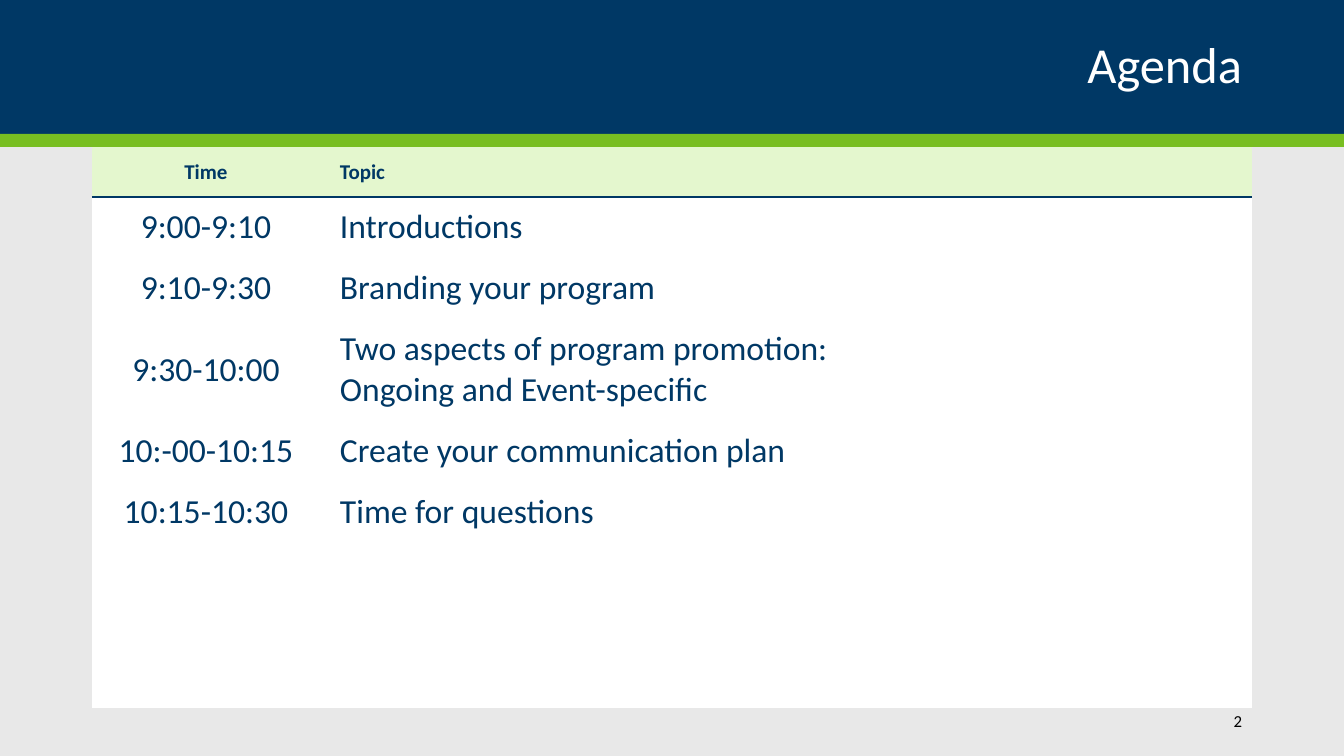
from dataclasses import dataclass

from lxml import etree
from pptx import Presentation
from pptx import util as u
from pptx.dml.color import RGBColor
from pptx.enum import shapes, text
from pptx.oxml import ns

PX = u.Inches(7.5) / 756
SLIDE_WIDTH, SLIDE_HEIGHT = 1344, 756


@dataclass(frozen=True)
class Theme:
    font: str = "Calibri"
    navy: str = "003865"
    green: str = "78BE21"
    pale_green: str = "E4F7CE"
    white: str = "FFFFFF"
    black: str = "000000"
    backdrop: str = "E8E8E8"
    title_size: int = 36
    heading_size: int = 15
    body_size: int = 24
    number_size: int = 12


THEME = Theme()
HEADINGS = ("Time", "Topic")
SESSIONS = [
    ("9:00-9:10", "Introductions"),
    ("9:10-9:30", "Branding your program"),
    ("9:30-10:00", "Two aspects of program promotion:\nOngoing and Event-specific"),
    ("10:-00-10:15", "Create your communication plan"),
    ("10:15-10:30", "Time for questions"),
]
SPARE_ROWS = 3
COLUMN_ALIGNMENTS = (text.PP_ALIGN.CENTER, text.PP_ALIGN.LEFT)


def px(length):
    return u.Emu(round(length * PX))


def paint(fill, color):
    fill.solid()
    fill.fore_color.rgb = RGBColor.from_string(color)


def style_paragraph(paragraph, size, color, align, bold=False):
    font = paragraph.font
    font.name, font.size, font.bold = THEME.font, u.Pt(size), bold
    font.color.rgb = RGBColor.from_string(color)
    paragraph.alignment = align


def add_band(slide, box, color):
    band = slide.shapes.add_shape(shapes.MSO_SHAPE.RECTANGLE, *map(px, box))
    band.shadow.inherit = False
    paint(band.fill, color)
    band.line.fill.background()


def add_right_label(slide, box, wording, size, color):
    frame = slide.shapes.add_textbox(*map(px, box)).text_frame
    frame.word_wrap = True
    frame.vertical_anchor = text.MSO_ANCHOR.MIDDLE
    label = frame.paragraphs[0]
    label.text = wording
    style_paragraph(label, size, color, text.PP_ALIGN.RIGHT)
    return label


def set_borders(cell, ruled_side=None):
    """Clear all four cell borders except the one ruled in navy."""
    properties = cell._tc.get_or_add_tcPr()
    for side in ("L", "R", "T", "B"):
        line = etree.SubElement(properties, ns.qn(f"a:ln{side}"), w=str(u.Pt(1)))
        if side == ruled_side:
            fill = etree.SubElement(line, ns.qn("a:solidFill"))
            etree.SubElement(fill, ns.qn("a:srgbClr"), val=THEME.navy)
        else:
            etree.SubElement(line, ns.qn("a:noFill"))


def fill_cell(cell, wording, column, is_heading, ruled_side):
    set_borders(cell, ruled_side)
    paint(cell.fill, THEME.pale_green if is_heading else THEME.white)
    cell.vertical_anchor = text.MSO_ANCHOR.MIDDLE
    cell.margin_left = px(20 if column else 10)
    cell.margin_right = px(10)
    cell.margin_top = cell.margin_bottom = px(5 if is_heading or not wording else 10)
    cell.text_frame.text = wording
    size = THEME.heading_size if is_heading else THEME.body_size
    for paragraph in cell.text_frame.paragraphs:
        style_paragraph(paragraph, size, THEME.navy, COLUMN_ALIGNMENTS[column], is_heading)


def add_header(slide, box):
    left, top, width, height = box
    stripe = 13
    add_band(slide, (left, top, width, height - stripe), THEME.navy)
    add_band(slide, (left, top + height - stripe, width, stripe), THEME.green)
    title = add_right_label(slide, (left + 92, top + 17, width - 184, 101),
                            "Agenda", THEME.title_size, THEME.white)
    title.line_spacing = 0.9


def add_agenda(slide, box):
    heading_height, line_height, padding = 50, 41, 20
    rows = [HEADINGS, *SESSIONS, *[("", "")] * SPARE_ROWS]
    heights = [heading_height]
    heights += [padding + line_height * len(topic.split("\n")) for _, topic in SESSIONS]
    heights += [(box[3] - sum(heights)) // SPARE_ROWS] * SPARE_ROWS

    table = slide.shapes.add_table(len(rows), len(HEADINGS), *map(px, box)).table
    table.horz_banding = False
    time_width = 228
    for column, width in zip(table.columns, (time_width, box[2] - time_width)):
        column.width = px(width)
    for row, (wordings, height) in enumerate(zip(rows, heights)):
        table.rows[row].height = px(height)
        ruled_side = {0: "B", 1: "T"}.get(row)
        for column, wording in enumerate(wordings):
            fill_cell(table.cell(row, column), wording, column, row == 0, ruled_side)


def build_agenda_slide(deck):
    slide = deck.slides.add_slide(deck.slide_layouts[6])
    paint(slide.background.fill, THEME.backdrop)
    add_header(slide, (0, 0, SLIDE_WIDTH, 147))
    add_agenda(slide, (92, 147, 1160, 561))
    add_right_label(slide, (1091, 701, 161, 40), "2", THEME.number_size, THEME.black)


def main():
    deck = Presentation()
    deck.slide_width, deck.slide_height = px(SLIDE_WIDTH), px(SLIDE_HEIGHT)
    build_agenda_slide(deck)
    deck.save("out.pptx")


if __name__ == "__main__":
    main()
